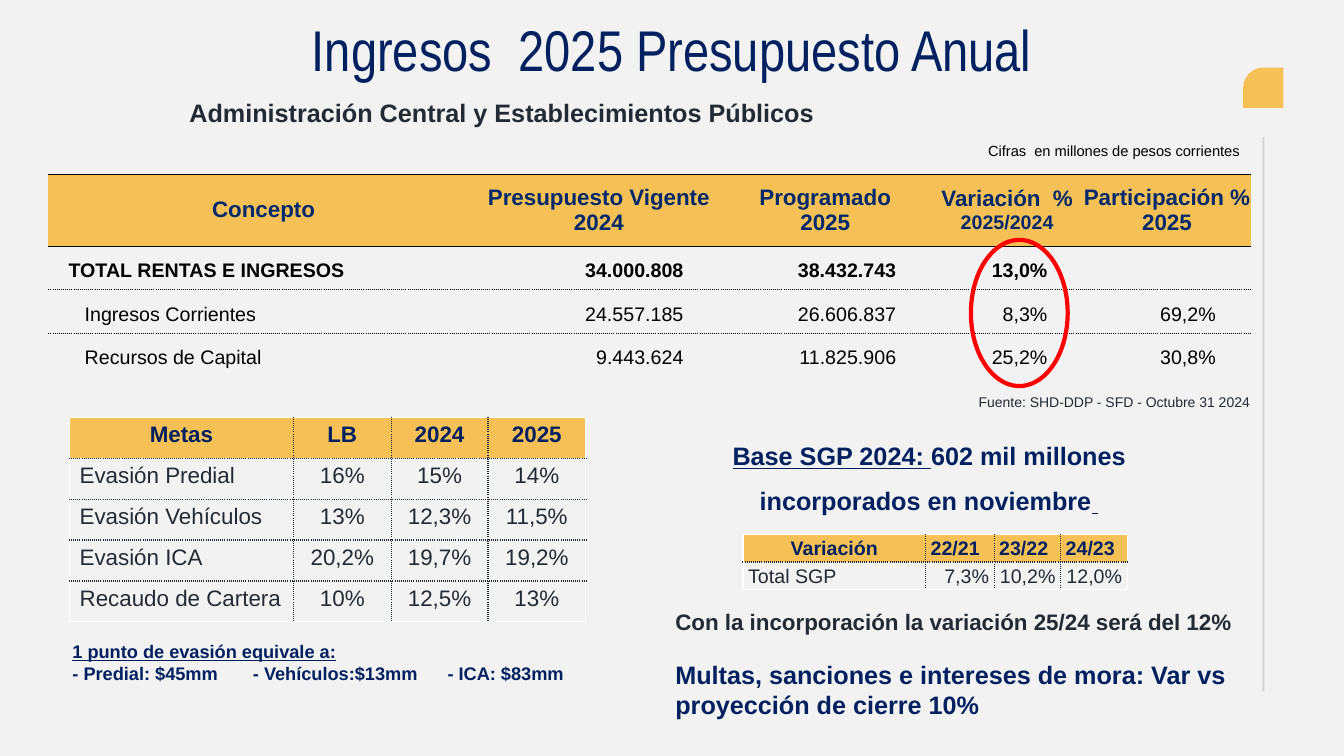
from dataclasses import dataclass

from lxml import etree
from pptx import Presentation
from pptx.dml.color import RGBColor
from pptx.enum.shapes import MSO_CONNECTOR, MSO_SHAPE
from pptx.enum.text import MSO_ANCHOR, PP_ALIGN
from pptx.oxml.ns import qn
from pptx.util import Inches, Pt

LEFT, CENTER, RIGHT = PP_ALIGN.LEFT, PP_ALIGN.CENTER, PP_ALIGN.RIGHT
TOP, MIDDLE, BOTTOM = MSO_ANCHOR.TOP, MSO_ANCHOR.MIDDLE, MSO_ANCHOR.BOTTOM
STRAIGHT = MSO_CONNECTOR.STRAIGHT
OVAL, ONE_ROUND_CORNER = MSO_SHAPE.OVAL, MSO_SHAPE.ROUND_1_RECTANGLE
NO_TABLE_STYLE = "{2D5ABB26-0587-4C30-8999-92F81FD0307C}"
SIDES = {"left": "a:lnL", "right": "a:lnR", "top": "a:lnT", "bottom": "a:lnB"}


@dataclass(frozen=True)
class Theme:
    font: str = "Arial"
    title_font: str = "Arial Narrow"
    paper: str = "F2F2F2"
    gold: str = "F5C157"
    ink: str = "232A34"
    navy: str = "002060"
    blue: str = "00296C"
    black: str = "000000"
    white: str = "FFFFFF"
    red: str = "FF0000"
    title: float = 41
    heading: float = 18
    body: float = 16
    small: float = 14
    note: float = 13
    units: float = 10.5
    source: float = 10


THEME = Theme()
SOLID = (THEME.black, 0.5, "solid")
DOTTED = (THEME.black, 0.5, "dot")
FRAME = (THEME.white, 1, "solid")
INNER = (THEME.ink, 1, "sysDot")


def grid(count):
    return Inches(count / 12)


@dataclass(frozen=True)
class Box:
    x: float
    y: float
    width: float
    height: float

    def area(self, x, y, width, height):
        return Box(self.x + x, self.y + y, width, height)

    def lengths(self):
        return [grid(n) for n in (self.x, self.y, self.width, self.height)]


def color(code):
    return RGBColor.from_string(code)


def write(frame, text, align=LEFT, spacing=None, tabs=(), **base):
    paras = text if isinstance(text, list) else [text]
    for number, content in enumerate(paras):
        para = frame.paragraphs[0] if number == 0 else frame.add_paragraph()
        para.alignment = align
        if spacing:
            para.line_spacing = spacing
        if tabs:
            tab_list = etree.SubElement(para._p.get_or_add_pPr(), qn("a:tabLst"))
            for stop in tabs:
                etree.SubElement(tab_list, qn("a:tab"), pos=str(grid(stop)), algn="l")
        spans = content if isinstance(content, tuple) else ((content, {}),)
        for words, extra in spans:
            look = {"size": THEME.body, "ink": THEME.navy, "bold": False,
                    "underline": False, "font": THEME.font, **base, **extra}
            span = para.add_run()
            span.text = words
            span.font.name = look["font"]
            span.font.size = Pt(look["size"])
            span.font.bold = look["bold"]
            span.font.underline = look["underline"]
            span.font.color.rgb = color(look["ink"])


def add_text(page, box, text, anchor=TOP, **look):
    frame = page.shapes.add_textbox(*box.lengths()).text_frame
    frame.word_wrap = True
    frame.vertical_anchor = anchor
    write(frame, text, **look)


def add_grid(page, box, columns, rows):
    table = page.shapes.add_table(len(rows), len(columns), *box.lengths()).table
    table.first_row = table.horz_banding = False
    table._tbl.tblPr.find(qn("a:tableStyleId")).text = NO_TABLE_STYLE
    for column, width in zip(table.columns, columns):
        column.width = grid(width)
    for row, height in zip(table.rows, rows):
        row.height = grid(height)
    return table


def style_cell(cell, margins, anchor, borders, fill=None):
    cell.margin_left, cell.margin_top, cell.margin_right, cell.margin_bottom = map(Inches, margins)
    cell.vertical_anchor = anchor
    for side, tag in SIDES.items():
        if side in borders:
            ink, width, dash = borders[side]
            line = etree.SubElement(cell._tc.get_or_add_tcPr(), qn(tag), w=str(Pt(width)))
            paint = etree.SubElement(line, qn("a:solidFill"))
            etree.SubElement(paint, qn("a:srgbClr"), val=ink)
            etree.SubElement(line, qn("a:prstDash"), val=dash)
    if fill:
        cell.fill.solid()
        cell.fill.fore_color.rgb = color(fill)
    else:
        cell.fill.background()


def framed_table(page, box, columns, records, margins, size, head_align, value_align, spacing=None):
    last_row, last_column = len(records) - 1, len(columns) - 1
    table = add_grid(page, box, columns, [box.height / len(records)] * len(records))
    for r, record in enumerate(records):
        for c, text in enumerate(record):
            borders = {"left": INNER if c else FRAME, "top": INNER if r else FRAME,
                       "right": INNER if c < last_column else FRAME,
                       "bottom": INNER if r < last_row else FRAME}
            cell = table.cell(r, c)
            style_cell(cell, margins, TOP, borders, None if r else THEME.gold)
            if r:
                align = value_align if c else LEFT
            else:
                align = head_align if c else CENTER
            write(cell.text_frame, text, align=align, spacing=spacing, size=size,
                  bold=r == 0, ink=THEME.ink if r else THEME.navy)


def header(page, box):
    add_text(page, box.area(11, 3.24, 138, 7.32), "Ingresos  2025 Presupuesto Anual", BOTTOM,
             align=CENTER, spacing=0.9, size=THEME.title, font=THEME.title_font)
    add_text(page, box.area(21.36, 11.04, 80, 4.8),
             "Administración Central y Establecimientos Públicos",
             size=THEME.heading, ink=THEME.ink, bold=True)
    add_text(page, box.area(114.72, 16.32, 35.76, 3.36), "Cifras  en millones de pesos corrientes",
             align=CENTER, size=THEME.units, ink=THEME.black)


def decoration(page, box):
    mark = page.shapes.add_shape(ONE_ROUND_CORNER, *box.area(0, 0, 4.8, 4.8).lengths())
    mark.shadow.inherit = False
    mark.adjustments[0] = 0.5
    mark.rotation = 270
    mark.fill.solid()
    mark.fill.fore_color.rgb = color(THEME.gold)
    mark.line.fill.background()
    x = grid(box.x + 2.4)
    rule = page.shapes.add_connector(STRAIGHT, x, grid(box.y + 8.28), x, grid(box.y + box.height))
    rule.line.width = Pt(1.5)
    rule.line.color.rgb = color(THEME.ink)
    ink = next(rule._element.iter(qn("a:srgbClr")))
    etree.SubElement(ink, qn("a:alpha"), val="15000")
    etree.SubElement(rule._element.spPr, qn("a:effectLst"))


def budget(page, box):
    heads = ["Concepto", "Presupuesto Vigente 2024", ["Programado", "2025"],
             ["Variación  %", (("2025/2024", {"size": THEME.small}),)], "Participación % 2025"]
    records = [["TOTAL RENTAS E INGRESOS", "34.000.808", "38.432.743", "13,0%", ""],
               ["Ingresos Corrientes", "24.557.185", "26.606.837", "8,3%", "69,2%"],
               ["Recursos de Capital", "9.443.624", "11.825.906", "25,2%", "30,8%"]]
    borders = [{"top": SOLID, "bottom": DOTTED}, {"top": DOTTED}, {}]
    table = add_grid(page, box, [51.24, 28.56, 25.32, 18, 20.04], [8.52, 5.16, 5.16, 5.16])
    for c, text in enumerate(heads):
        cell = table.cell(0, c)
        style_cell(cell, [0] * 4, MIDDLE, {"top": SOLID, "bottom": SOLID}, THEME.gold)
        write(cell.text_frame, text, align=CENTER, ink=THEME.blue, bold=True)
    for r, record in enumerate(records):
        for c, text in enumerate(record):
            cell = table.cell(r + 1, c)
            indent = 0.36 if r and not c else 0.2
            margins = (indent, 0.12, 0.35, 0.08) if text else [0] * 4
            style_cell(cell, margins, BOTTOM, borders[r], None if r else THEME.paper)
            if text:
                write(cell.text_frame, text, align=RIGHT if c else LEFT,
                      size=THEME.small, ink=THEME.black, bold=r == 0)
    ring = page.shapes.add_shape(OVAL, *box.area(109.8, 7.8, 11.52, 17.4).lengths())
    ring.shadow.inherit = False
    ring.fill.background()
    ring.line.color.rgb = color(THEME.red)
    ring.line.width = Pt(3)
    add_text(page, box.area(103.92, 25.44, 45.84, 3.24), "Fuente: SHD-DDP - SFD - Octubre 31 2024",
             align=CENTER, size=THEME.source, ink=THEME.ink)


def goals(page, box):
    records = [["Metas", "LB", "2024", "2025"],
               ["Evasión Predial", "16%", "15%", "14%"],
               ["Evasión Vehículos", "13%", "12,3%", "11,5%"],
               ["Evasión ICA", "20,2%", "19,7%", "19,2%"],
               ["Recaudo de Cartera", "10%", "12,5%", "13%"]]
    framed_table(page, box, [26.64, 11.64, 11.52, 11.64], records, (0.1, 0.05, 0.1, 0.05),
                 THEME.body, CENTER, CENTER)
    add_text(page, box.area(-0.84, 25.92, 63.36, 6.48),
             [(("1 punto de evasión equivale a:", {"underline": True}),),
              "- Predial: $45mm\t- Vehículos:$13mm\t- ICA: $83mm"],
             tabs=(21.48, 44.64), size=THEME.note, bold=True)


def transfers(page, box):
    add_text(page, box.area(0.84, 0, 61.08, 11.4),
             [(("Base SGP 2024: ", {"underline": True}),
               ("602 mil millones incorporados en noviembre", {}), (" ", {"underline": True}))],
             align=CENTER, spacing=1.5, size=THEME.heading, bold=True)
    records = [["Variación", "22/21", "23/22", "24/23"], ["Total SGP", "7,3%", "10,2%", "12,0%"]]
    framed_table(page, box.area(9.24, 13.62, 45.72, 6.48), [21.72, 8.16, 7.92, 7.92], records,
                 (0.05, 0, 0.05, 0), THEME.small, LEFT, RIGHT, spacing=1.15)
    add_text(page, box.area(0, 21.72, 69, 4.44), "Con la incorporación la variación 25/24 será del 12%",
             ink=THEME.ink, bold=True)
    add_text(page, box.area(0, 27.84, 71.28, 8.52),
             "Multas, sanciones e intereses de mora: Var vs proyección de cierre 10%",
             size=THEME.heading, bold=True)


def main():
    deck = Presentation()
    deck.slide_width, deck.slide_height = Inches(13.33), Inches(7.5)
    page = deck.slides.add_slide(deck.slide_layouts[6])
    page.background.fill.solid()
    page.background.fill.fore_color.rgb = color(THEME.paper)
    decoration(page, Box(147.96, 8.04, 4.8, 74.28))
    header(page, Box(0, 0, 160, 20.76))
    budget(page, Box(5.76, 20.76, 143.28, 24))
    goals(page, Box(8.28, 49.68, 61.44, 24.36))
    transfers(page, Box(79.2, 50.04, 71.28, 36.36))
    deck.save("out.pptx")


if __name__ == "__main__":
    main()
